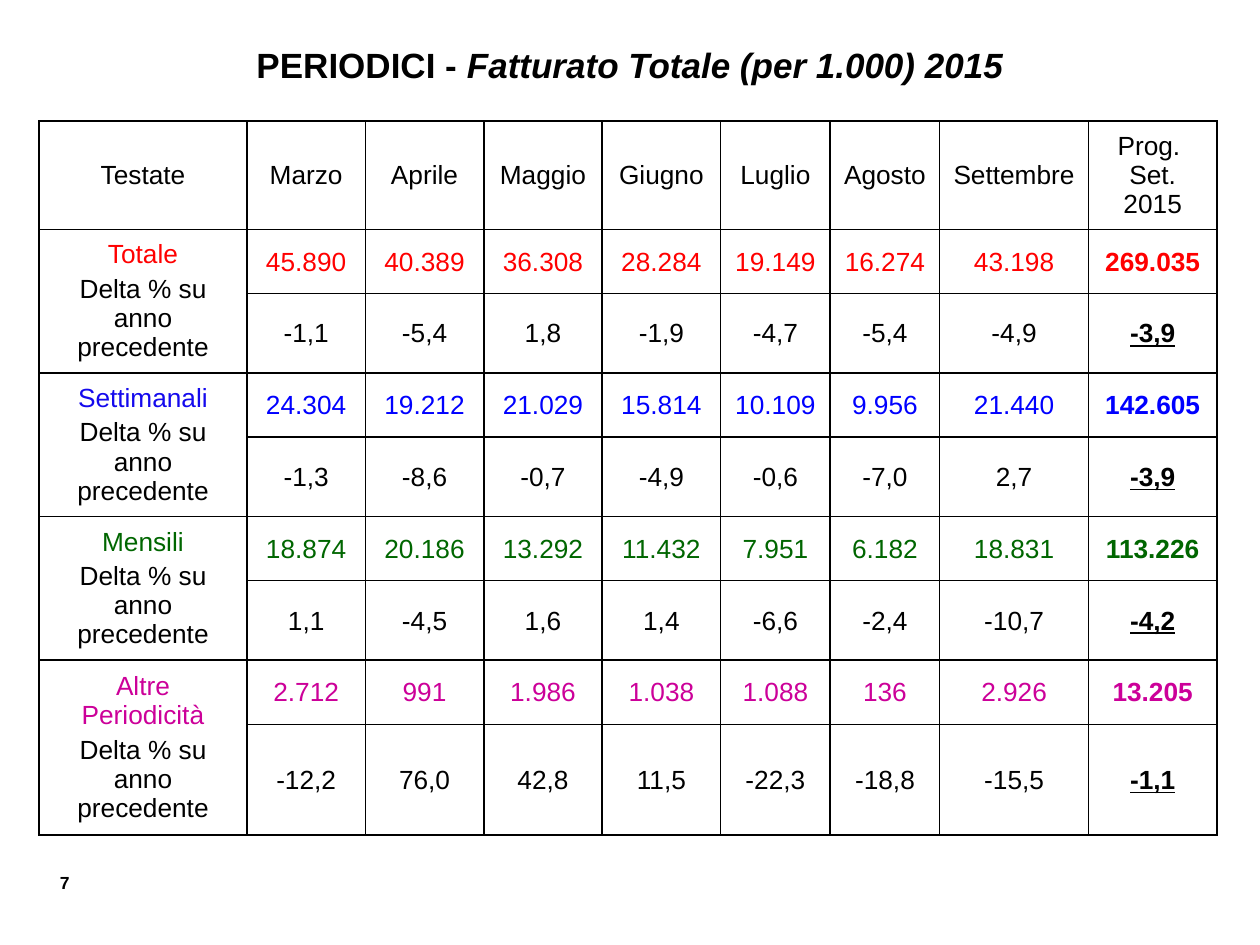
from lxml.etree import SubElement
from pptx import Presentation
from pptx.dml.color import RGBColor
from pptx.enum.text import MSO_ANCHOR, PP_ALIGN
from pptx.oxml.ns import qn
from pptx.util import Inches, Pt

BLACK = "000000"
HEADERS = ["Testate", "Marzo", "Aprile", "Maggio", "Giugno", "Luglio", "Agosto",
           "Settembre", "Prog. \nSet.\n2015"]
# Name, name colour, figure colour, revenue, change on the previous year
PERIODICALS = [
    ("Totale", "FF0000", "FF0000",
     ["45.890", "40.389", "36.308", "28.284", "19.149", "16.274", "43.198", "269.035"],
     ["-1,1", "-5,4", "1,8", "-1,9", "-4,7", "-5,4", "-4,9", "-3,9"]),
    ("Settimanali", "1409ED", "0000FF",
     ["24.304", "19.212", "21.029", "15.814", "10.109", "9.956", "21.440", "142.605"],
     ["-1,3", "-8,6", "-0,7", "-4,9", "-0,6", "-7,0", "2,7", "-3,9"]),
    ("Mensili", "006600", "006600",
     ["18.874", "20.186", "13.292", "11.432", "7.951", "6.182", "18.831", "113.226"],
     ["1,1", "-4,5", "1,6", "1,4", "-6,6", "-2,4", "-10,7", "-4,2"]),
    ("Altre Periodicità", "CC0099", "CC0099",
     ["2.712", "991", "1.986", "1.038", "1.088", "136", "2.926", "13.205"],
     ["-12,2", "76,0", "42,8", "11,5", "-22,3", "-18,8", "-15,5", "-1,1"]),
]
COLUMN_WIDTHS = [1.65] + [0.94] * 4 + [0.87] * 2 + [1.18, 1.02]
ROW_HEIGHTS = [0.86] + [0.51, 0.63] * 3 + [0.51, 0.88]


def style(paragraph, size, color, bold=False, align=PP_ALIGN.CENTER):
    paragraph.alignment = align
    font = paragraph.font
    font.name, font.size, font.bold = "Arial", Pt(size), bold
    font.color.rgb = RGBColor.from_string(color)


def draw_borders(cell):
    """Give the cell a black 1 pt line on all four sides and no fill."""
    properties = cell._tc.get_or_add_tcPr()
    for side in ("lnL", "lnR", "lnT", "lnB"):
        line = SubElement(properties, qn(f"a:{side}"), w=str(Pt(1)))
        fill = SubElement(line, qn("a:solidFill"))
        SubElement(fill, qn("a:srgbClr"), val=BLACK)
    cell.fill.background()


prs = Presentation()
prs.slide_width, prs.slide_height = Inches(10), Inches(7.5)
slide = prs.slides.add_slide(prs.slide_layouts[5])

title = slide.shapes.title
title.left, title.top = Inches(0), Inches(0.29)
title.width, title.height = Inches(10), Inches(0.44)
title.text_frame.vertical_anchor = MSO_ANCHOR.MIDDLE
heading = title.text_frame.paragraphs[0]
heading.add_run().text = "PERIODICI - "
subject = heading.add_run()
subject.text = "Fatturato Totale (per 1.000) 2015"
subject.font.italic = True
style(heading, 20, BLACK, bold=True)

revenue = slide.shapes.add_table(
    len(ROW_HEIGHTS), len(COLUMN_WIDTHS), Inches(0.31), Inches(0.96),
    Inches(sum(COLUMN_WIDTHS)), Inches(sum(ROW_HEIGHTS))).table
revenue.first_row = revenue.horz_banding = False
for column, width in zip(revenue.columns, COLUMN_WIDTHS):
    column.width = Inches(width)
for row, height in zip(revenue.rows, ROW_HEIGHTS):
    row.height = Inches(height)

for cell in revenue.iter_cells():
    draw_borders(cell)
    cell.vertical_anchor = MSO_ANCHOR.MIDDLE

for column, header in enumerate(HEADERS):
    cell = revenue.cell(0, column)
    cell.text = header
    for paragraph in cell.text_frame.paragraphs:
        style(paragraph, 15, BLACK)

for index, (name, name_color, figure_color, totals, deltas) in enumerate(PERIODICALS):
    top = 1 + 2 * index
    label = revenue.cell(top, 0)
    label.merge(revenue.cell(top + 1, 0))
    label.text = f"{name}\nDelta % su anno precedente"
    name_line, delta_line = label.text_frame.paragraphs
    style(name_line, 15, name_color)
    style(delta_line, 15, BLACK)
    delta_line.space_before = Pt(3)

    for row, figures, color in ((top, totals, figure_color), (top + 1, deltas, BLACK)):
        for column, figure in enumerate(figures, 1):
            cell = revenue.cell(row, column)
            cell.margin_left = cell.margin_right = cell.margin_top = Inches(0.01)
            cell.margin_bottom = Inches(0)
            cell.text = figure
            is_progressive = column == len(figures)
            paragraph = cell.text_frame.paragraphs[0]
            style(paragraph, 15, color, bold=is_progressive)
            if is_progressive and figures is deltas:
                paragraph.font.underline = True

page_number = slide.shapes.add_textbox(Inches(0.19), Inches(6.87), Inches(0.46), Inches(0.27))
page_number.text_frame.word_wrap = True
page_number.text_frame.text = "7"
style(page_number.text_frame.paragraphs[0], 10, BLACK, bold=True, align=PP_ALIGN.RIGHT)

prs.save("out.pptx")
